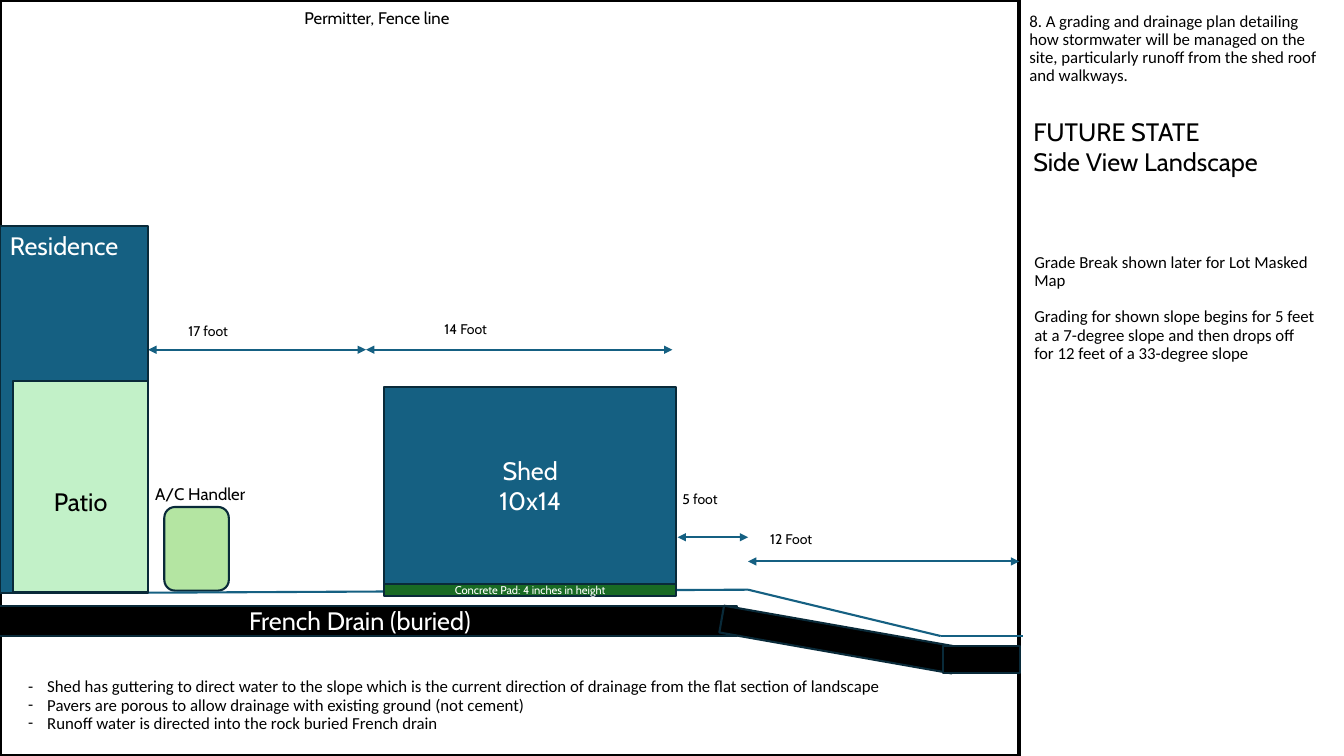
from lxml import etree
from pptx import Presentation
from pptx.dml.color import RGBColor
from pptx.enum.shapes import MSO_CONNECTOR, MSO_SHAPE
from pptx.enum.text import MSO_ANCHOR, PP_ALIGN
from pptx.oxml.ns import qn
from pptx.util import Inches, Pt

RECT = MSO_SHAPE.RECTANGLE
ROUND = MSO_SHAPE.ROUNDED_RECTANGLE
LINE = MSO_CONNECTOR.STRAIGHT
TOP, MIDDLE = MSO_ANCHOR.TOP, MSO_ANCHOR.MIDDLE
LEFT, CENTER = PP_ALIGN.LEFT, PP_ALIGN.CENTER

COLORS = {
    "black": "000000",
    "white": "FFFFFF",
    "blue": "156082",
    "navy": "092A39",
    "mint": "C2F1C8",
    "lime": "B4E5A2",
    "green": "196B24",
}


def color(name):
    return RGBColor.from_string(COLORS[name])


def write(shape, text, size=12, font="Cabin", ink="black", align=LEFT,
          anchor=TOP, space=None, gap=0, bullet=None, top=0.05):
    frame = shape.text_frame
    frame.word_wrap = True
    frame.vertical_anchor = anchor
    frame.margin_top = Inches(top)
    for index, line in enumerate(text.split("\n")):
        para = frame.add_paragraph() if index else frame.paragraphs[0]
        para.alignment = align
        para.line_spacing = space
        if index and gap:
            para.space_before = Pt(gap)
        run = para.add_run()
        run.text = line
        run.font.size = Pt(size)
        run.font.name = font
        run.font.color.rgb = color(ink)
        if bullet:
            props = para._p.get_or_add_pPr()
            props.set("marL", str(Inches(0.19)))
            props.set("indent", str(-Inches(0.19)))
            etree.SubElement(props, qn("a:buFont")).set("typeface", font)
            etree.SubElement(props, qn("a:buChar")).set("char", bullet)


def label(slide, box, text, **style):
    shape = slide.shapes.add_textbox(*map(Inches, box))
    write(shape, text, **style)


def block(slide, box, fill=None, edge="navy", width=1.5, kind=RECT, turn=0):
    shape = slide.shapes.add_shape(kind, *map(Inches, box))
    shape.shadow.inherit = False
    shape.rotation = turn
    if fill:
        shape.fill.solid()
        shape.fill.fore_color.rgb = color(fill)
    else:
        shape.fill.background()
    shape.line.color.rgb = color(edge)
    shape.line.width = Pt(width)
    return shape


def stroke(slide, start, end, arrows=False):
    line = slide.shapes.add_connector(LINE, *map(Inches, start + end))
    line.line.color.rgb = color("blue")
    line.line.width = Pt(1.5)
    props = line._element.spPr
    if arrows:
        for tag in ("a:headEnd", "a:tailEnd"):
            etree.SubElement(props.find(qn("a:ln")), qn(tag)).set("type", "triangle")
    etree.SubElement(props, qn("a:effectLst"))


def draw_drain(slide):
    drain = block(slide, (-0.17, 6.01, 7.48, 0.3), "black")
    write(drain, "French Drain (buried)", size=18, ink="white",
          align=CENTER, anchor=MIDDLE)
    ground = [(1.47, 5.88), (7.42, 5.85), (9.33, 6.31), (10.15, 6.31)]
    for start, end in zip(ground, ground[1:]):
        stroke(slide, start, end)
    block(slide, (7.14, 6.21, 2.34, 0.27), "black", turn=10)
    block(slide, (9.35, 6.41, 0.77, 0.27), "black")


def draw_shed(slide):
    shed = block(slide, (3.81, 3.84, 2.9, 1.95), "blue")
    write(shed, "Shed\n10x14", size=18, ink="white", align=CENTER, anchor=MIDDLE)
    pad = block(slide, (3.81, 5.79, 2.9, 0.12), "green")
    write(pad, "Concrete Pad: 4 inches in height", size=8, ink="white",
          align=CENTER, anchor=MIDDLE)


def draw_spans(slide):
    spans = [
        ("17 foot", 1.47, 3.63, 3.47, 1.77, 3.15),
        ("14 Foot", 3.63, 6.67, 3.47, 4.31, 3.13),
        ("5 foot", 6.72, 7.42, 5.33, 6.67, 4.82),
        ("12 Foot", 7.42, 10.11, 5.57, 7.54, 5.21),
    ]
    for text, start, end, level, left, top in spans:
        stroke(slide, (start, level), (end, level), arrows=True)
        label(slide, (left, top, 0.87, 0.27), text, size=10)


def draw_house(slide):
    house = block(slide, (0, 2.24, 1.47, 3.64), "blue")
    write(house, "Residence", size=18, ink="white")
    patio = block(slide, (0.13, 3.78, 1.34, 2.09), "mint")
    write(patio, "Patio", size=18, align=CENTER, anchor=MIDDLE, top=0.35)


def draw_notes(slide):
    body = {"font": "Calibri", "anchor": MIDDLE, "space": 0.9}
    label(slide, (10.11, 0.05, 3.05, 0.87),
          "8. A grading and drainage plan detailing how stormwater will be "
          "managed on the site, particularly runoff from the shed roof and "
          "walkways.", **body)
    label(slide, (10.15, 1.1, 2.81, 0.71),
          "FUTURE STATE\nSide View Landscape", size=18)
    label(slide, (10.16, 2.54, 3.01, 1.04),
          "Grade Break shown later for Lot Masked Map\n"
          "Grading for shown slope begins for 5 feet at a 7-degree slope and "
          "then drops off for 12 feet of a 33-degree slope", gap=13, **body)
    label(slide, (0.18, 6.59, 8.78, 0.82),
          "Shed has guttering to direct water to the slope which is the "
          "current direction of drainage from the flat section of landscape\n"
          "Pavers are porous to allow drainage with existing ground (not cement)\n"
          "Runoff water is directed into the rock buried French drain",
          bullet="-", **body)


def main():
    deck = Presentation()
    deck.slide_width = Inches(13.33)
    deck.slide_height = Inches(7.5)
    slide = deck.slides.add_slide(deck.slide_layouts[6])
    block(slide, (0, 0, 10.11, 7.5), edge="black", width=3)
    label(slide, (2.92, 0.03, 2.54, 0.3), "Permitter, Fence line")
    block(slide, (1.63, 5.03, 0.64, 0.83), "lime", kind=ROUND)
    label(slide, (1.44, 4.75, 1.2, 0.3), "A/C Handler")
    draw_drain(slide)
    draw_shed(slide)
    draw_spans(slide)
    draw_house(slide)
    draw_notes(slide)
    deck.save("out.pptx")


if __name__ == "__main__":
    main()
